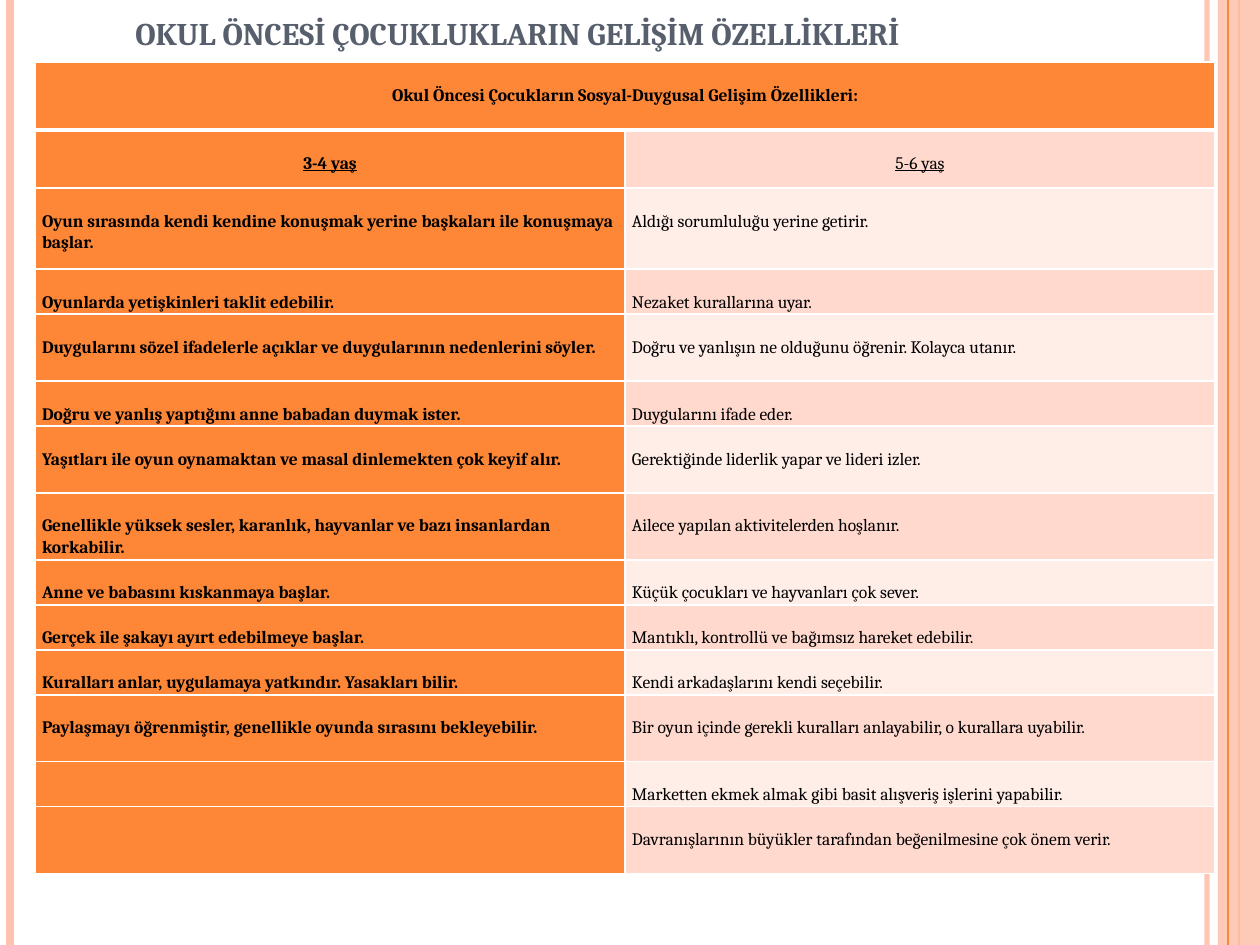
from lxml.etree import SubElement
from pptx import Presentation
from pptx.dml.color import RGBColor
from pptx.enum.shapes import MSO_CONNECTOR, MSO_SHAPE
from pptx.enum.text import MSO_ANCHOR, PP_ALIGN
from pptx.oxml.ns import qn
from pptx.util import Pt

PX = 914400 // 126
WIDTH, HEIGHT = 1260, 945
FONT = "Cambria"
ORANGE, PEACH, ROSE, BLUSH = "FE8637", "FEC3AE", "FFD9CE", "FFEDE8"
WHITE, BLACK, SLATE = "FFFFFF", "000000", "575F6D"

TITLE = "OKUL ÖNCESİ ÇOCUKLUKLARIN GELİŞİM ÖZELLİKLERİ"
HEADING = "Okul Öncesi Çocukların Sosyal-Duygusal Gelişim Özellikleri:"
# Row height, ages 3-4, ages 5-6
TRAITS = [
    (58, "3-4 yaş", "5-6 yaş"),
    (81, "Oyun sırasında kendi kendine konuşmak yerine başkaları ile konuşmaya başlar.",
     "Aldığı sorumluluğu yerine getirir."),
    (45, "Oyunlarda yetişkinleri taklit edebilir.", "Nezaket kurallarına uyar."),
    (67, "Duygularını sözel ifadelerle açıklar ve duygularının nedenlerini söyler.",
     "Doğru ve yanlışın ne olduğunu öğrenir. Kolayca utanır."),
    (45, "Doğru ve yanlış yaptığını anne babadan duymak ister.", "Duygularını ifade eder."),
    (67, "Yaşıtları ile oyun oynamaktan ve masal dinlemekten çok keyif alır.",
     "Gerektiğinde liderlik yapar ve lideri izler."),
    (67, "Genellikle yüksek sesler, karanlık, hayvanlar ve bazı insanlardan korkabilir.",
     "Ailece yapılan aktivitelerden hoşlanır."),
    (45, "Anne ve babasını kıskanmaya başlar.", "Küçük çocukları ve hayvanları çok sever."),
    (45, "Gerçek ile şakayı ayırt edebilmeye başlar.",
     "Mantıklı, kontrollü ve bağımsız hareket edebilir."),
    (45, "Kuralları anlar, uygulamaya yatkındır. Yasakları bilir.",
     "Kendi arkadaşlarını kendi seçebilir."),
    (67, "Paylaşmayı öğrenmiştir, genellikle oyunda sırasını bekleyebilir.",
     "Bir oyun içinde gerekli kuralları anlayabilir, o kurallara uyabilir."),
    (45, "", "Marketten ekmek almak gibi basit alışveriş işlerini yapabilir."),
    (67, "", "Davranışlarının büyükler tarafından beğenilmesine çok önem verir."),
]
HEADING_HEIGHT = 68


def px(*lengths):
    return [length * PX for length in lengths]


def paint(color_owner, color):
    """Apply a hex colour to a fill or a font."""
    if hasattr(color_owner, "solid"):
        color_owner.solid()
        color_owner.fore_color.rgb = RGBColor.from_string(color)
    else:
        color_owner.color.rgb = RGBColor.from_string(color)


def set_alpha(properties, percent):
    color = next(properties.iter(qn("a:srgbClr")))
    SubElement(color, qn("a:alpha"), val=str(percent * 1000))


def add_stripe(slide, x, top, height, color, weight, alpha=100):
    stripe = slide.shapes.add_connector(
        MSO_CONNECTOR.STRAIGHT, *px(x, top, x, top + height))
    stripe.line.width = Pt(weight)
    paint(stripe.line.fill, color)
    properties = stripe.element.spPr
    if alpha < 100:
        set_alpha(properties, alpha)
    SubElement(properties, qn("a:effectLst"))


def add_side_stripes(slide, left, top, width, height):
    right = left + width
    add_stripe(slide, right - 53, top, height, PEACH, 3, 93)
    add_stripe(slide, left + 10, top, height, PEACH, 4.5)
    add_stripe(slide, right - 21, top, height, ORANGE, 1.5)
    band = slide.shapes.add_shape(
        MSO_SHAPE.RECTANGLE, *px(right - 42, top, 42, height))
    band.shadow.inherit = False
    band.line.fill.background()
    paint(band.fill, PEACH)
    set_alpha(band.element.spPr, 87)
    add_stripe(slide, right - 32, top, height, ORANGE, 0.75)


def add_title(slide, left, top, width, height):
    frame = slide.shapes.add_textbox(*px(left, top, width, height)).text_frame
    frame.word_wrap = True
    frame.vertical_anchor = MSO_ANCHOR.BOTTOM
    frame.text = TITLE
    font = frame.paragraphs[0].runs[0].font
    font.name, font.size, font.bold = FONT, Pt(18), True
    paint(font, SLATE)


def set_borders(cell, weights):
    """Draw white left, right, top and bottom borders, ahead of the cell fill."""
    properties = cell._tc.get_or_add_tcPr()
    for position, (side, weight) in enumerate(zip("LRTB", weights)):
        border = SubElement(properties, qn(f"a:ln{side}"), w=str(Pt(weight)))
        fill = SubElement(border, qn("a:solidFill"))
        SubElement(fill, qn("a:srgbClr"), val=WHITE)
        properties.insert(position, border)


def fill_cell(cell, text, color, bold, centred=False, underline=False):
    paint(cell.fill, color)
    cell.margin_left = cell.margin_right = 7 * PX
    cell.margin_top = 22 * PX if text else 0
    cell.margin_bottom = 0
    if not text:
        return
    cell.text = text
    paragraph = cell.text_frame.paragraphs[0]
    paragraph.line_spacing = 1.07
    paragraph.alignment = PP_ALIGN.CENTER if centred else PP_ALIGN.LEFT
    font = paragraph.runs[0].font
    font.name, font.size = FONT, Pt(10)
    font.bold, font.underline = bold, underline
    paint(font, BLACK)


def add_traits_table(slide, left, top, width):
    heights = [HEADING_HEIGHT] + [height for height, *_ in TRAITS]
    table = slide.shapes.add_table(
        len(heights), 2, *px(left, top, width, sum(heights))).table
    for column in table.columns:
        column.width = width // 2 * PX
    for row, height in zip(table.rows, heights):
        row.height = height * PX

    heading = table.cell(0, 0)
    heading.merge(table.cell(0, 1))
    fill_cell(heading, HEADING, ORANGE, bold=True, centred=True)
    for index, (_, younger, older) in enumerate(TRAITS, start=1):
        is_age = index == 1
        shade = ROSE if index % 2 else BLUSH
        fill_cell(table.cell(index, 0), younger, ORANGE, True, is_age, is_age)
        fill_cell(table.cell(index, 1), older, shade, False, is_age, is_age)

    for index in range(len(heights)):
        weights = (1, 1, 3 if index == 1 else 1, 3 if index == 0 else 1)
        for column in range(2):
            set_borders(table.cell(index, column), weights)


def main():
    deck = Presentation()
    deck.slide_width, deck.slide_height = px(WIDTH, HEIGHT)
    slide = deck.slides.add_slide(deck.slide_layouts[6])
    add_side_stripes(slide, 0, 0, WIDTH, HEIGHT)
    add_title(slide, 123, 0, 1030, 58)
    add_traits_table(slide, 35, 62, 1180)
    deck.save("out.pptx")


if __name__ == "__main__":
    main()
